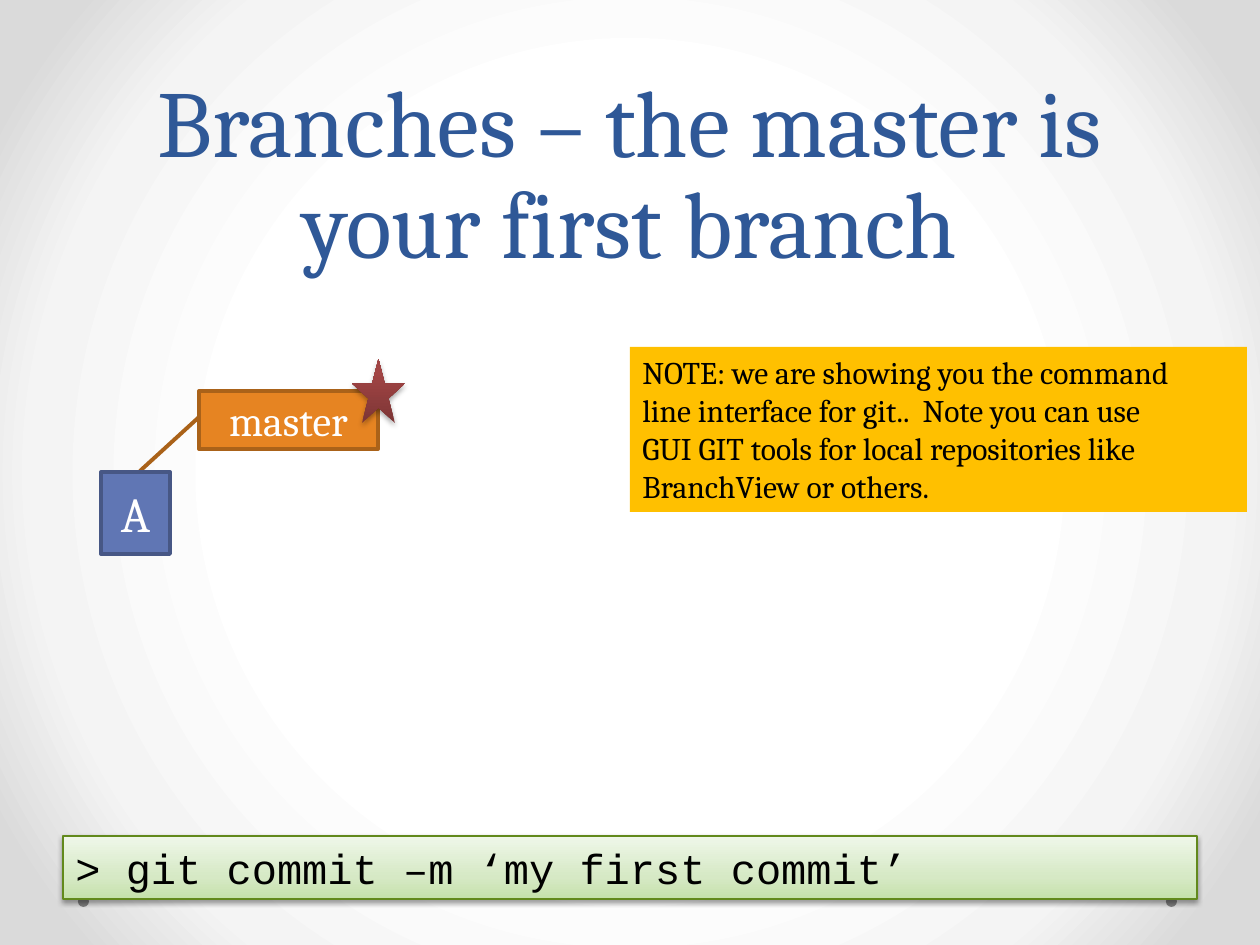
from lxml import etree
from pptx import Presentation
from pptx.dml.color import RGBColor
from pptx.enum import shapes, text
from pptx.oxml import parse_xml
from pptx.oxml.ns import nsdecls, qn
from pptx import util as u

PX = 914400 // 126  # EMU per pixel
SHAPE = shapes.MSO_SHAPE
LEFT, CENTER = text.PP_ALIGN.LEFT, text.PP_ALIGN.CENTER
TOP, MIDDLE, BOTTOM = (text.MSO_ANCHOR.TOP, text.MSO_ANCHOR.MIDDLE,
                       text.MSO_ANCHOR.BOTTOM)
COLORS = {
    "title": "2F5897", "dot": "808080", "white": "FFFFFF", "black": "000000",
    "branch": "E68422", "branch_line": "AA6219",
    "commit": "6076B4", "commit_line": "475785",
    "command_line": "62891C", "note": "FFC000",
}
# Gradient stops: position in percent, colour
BACKDROP = [(50, "FFFFFF"), (76, "F4F4F4"), (92, "DADADA")]
GREEN = [(0, "C5E1AB"), (35, "D6E9C5"), (100, "EFF7E9")]
RED = [(0, "7D3535"), (80, "A24545"), (100, "A44343")]
UPWARD = '<a:lin ang="16200000" scaled="0"/>'
RADIAL = ('<a:path path="circle"><a:fillToRect l="50000" t="50000" '
          'r="50000" b="50000"/></a:path>')


def rgb(name):
    return RGBColor.from_string(COLORS[name])


def set_gradient(fill, parent, stops, direction):
    """Swap a solid fill for a gradient with any number of stops."""
    fill.solid()
    fill.fore_color.rgb = rgb("white")
    gs = "".join(f'<a:gs pos="{pos * 1000}"><a:srgbClr val="{color}"/></a:gs>'
                 for pos, color in stops)
    gradient = parse_xml(f'<a:gradFill {nsdecls("a")} rotWithShape="1">'
                         f'<a:gsLst>{gs}</a:gsLst>{direction}</a:gradFill>')
    solid = next(parent.iter(qn("a:solidFill")))
    solid.getparent().replace(solid, gradient)


def add_shadow(sp, alpha, distance):
    effects = sp._element.spPr.find(qn("a:effectLst"))
    shadow = etree.SubElement(
        effects, qn("a:outerShdw"), blurRad=str(u.Pt(3.1)),
        dist=str(u.Pt(distance)), dir="5400000", rotWithShape="0")
    color = etree.SubElement(shadow, qn("a:srgbClr"), val=COLORS["black"])
    etree.SubElement(color, qn("a:alpha"), val=str(alpha * 1000))


def add_shape(s, kind, box, fill=None, stops=None, line=None, width=2.25):
    sp = s.shapes.add_shape(kind, *(n * PX for n in box))
    sp.shadow.inherit = False
    if stops:
        set_gradient(sp.fill, sp._element.spPr, stops, UPWARD)
    else:
        sp.fill.solid()
        sp.fill.fore_color.rgb = rgb(fill)
    if line:
        sp.line.color.rgb = rgb(line)
        sp.line.width = u.Pt(width)
    else:
        sp.line.fill.background()
    return sp


def write(sp, words, size, color, font="Cambria", align=LEFT, anchor=TOP):
    tf = sp.text_frame
    tf.word_wrap = True
    tf.vertical_anchor = anchor
    p = tf.paragraphs[0]
    p.text = words
    p.alignment = align
    p.font.name = font
    p.font.size = u.Pt(size)
    p.font.color.rgb = rgb(color)
    return p


def main():
    prs = Presentation()
    prs.slide_width, prs.slide_height = u.Inches(10), u.Inches(7.5)
    s = prs.slides.add_slide(prs.slide_layouts[6])

    # Background and footer dots
    fill = s.background.fill
    set_gradient(fill, s._element.cSld, BACKDROP, RADIAL)
    for left in (1166, 78):
        add_shape(s, SHAPE.OVAL, (left, 896, 11, 11), "dot")

    # Title
    title = s.shapes.add_textbox(*(n * PX for n in (63, 126, 1134, 158)))
    p = write(title, "Branches – the master is your first branch", 54, "title",
              align=CENTER, anchor=BOTTOM)
    p.line_spacing = u.Pt(58)

    # Branch label pointing at its commit
    branch = add_shape(s, SHAPE.LINE_CALLOUT_1, (199, 391, 179, 58),
                       "branch", line="branch_line")
    for i, value in enumerate((0.45, 0, 1.38, -0.33)):
        branch.adjustments[i] = value
    write(branch, "master", 24, "white", align=CENTER, anchor=MIDDLE)
    commit = add_shape(s, SHAPE.RECTANGLE, (101, 472, 69, 82),
                       "commit", line="commit_line")
    write(commit, "A", 28, "white", align=CENTER, anchor=MIDDLE)

    # Command line
    command = add_shape(s, SHAPE.RECTANGLE, (63, 836, 1134, 63), stops=GREEN,
                        line="command_line", width=0.75)
    add_shadow(command, 38, 1.6)
    write(command, "> git commit –m ‘my first commit’", 24, "black",
          font="Courier New")

    # Star marking the current branch
    star = add_shape(s, SHAPE.STAR_5_POINT, (352, 359, 53, 64), stops=RED)
    add_shadow(star, 35, 1.8)

    # Note
    note = add_shape(s, SHAPE.RECTANGLE, (630, 347, 617, 165), "note")
    write(note, "NOTE: we are showing you the command\v"
                "line interface for git..  Note you can use\v"
                "GUI GIT tools for local repositories like\v"
                "BranchView or others.", 18, "black")

    prs.save("out.pptx")


if __name__ == "__main__":
    main()
